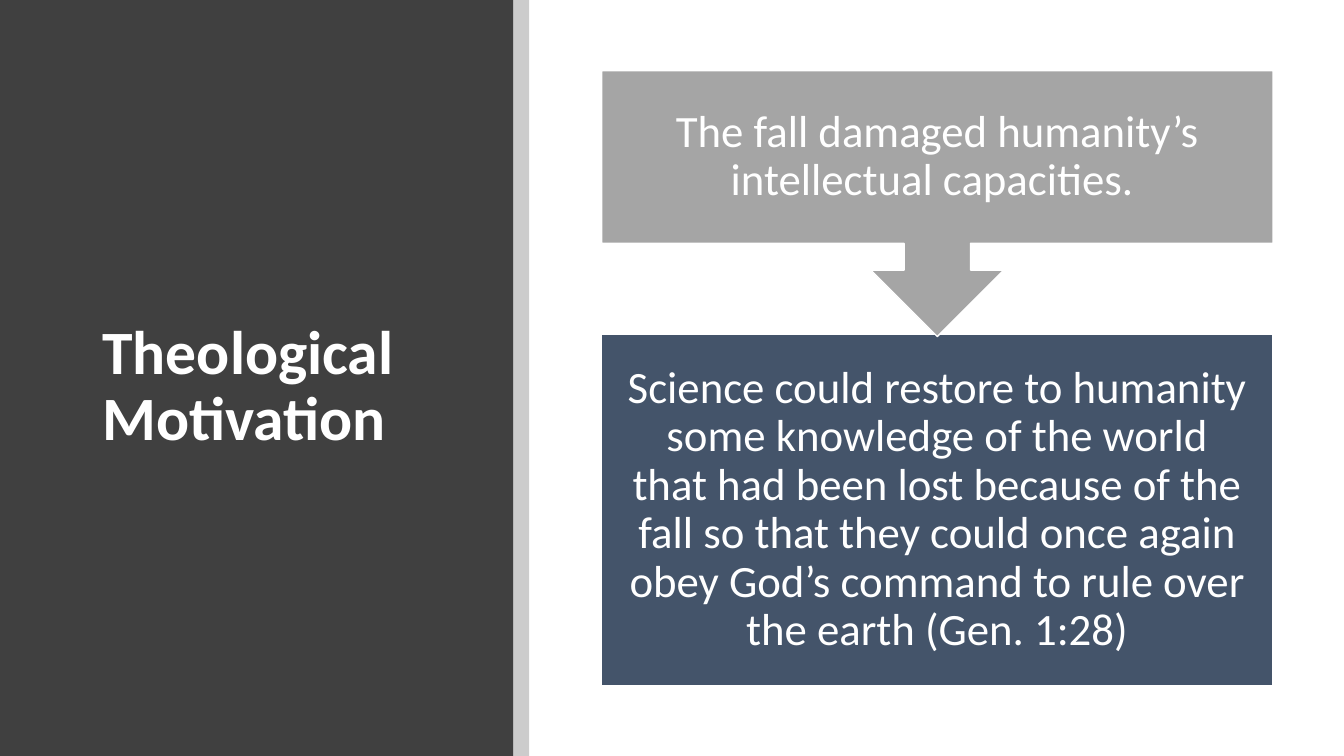
"""Build the Theological Motivation slide."""
from dataclasses import dataclass

from lxml import etree
from pptx import Presentation
from pptx.dml.color import RGBColor
from pptx.enum.shapes import MSO_SHAPE
from pptx.enum.text import MSO_ANCHOR, MSO_AUTO_SIZE, PP_ALIGN
from pptx.oxml.ns import qn
from pptx.util import Pt

RECTANGLE = MSO_SHAPE.RECTANGLE
DOWN_CALLOUT = MSO_SHAPE.DOWN_ARROW_CALLOUT
MIDDLE = MSO_ANCHOR.MIDDLE
NO_AUTOFIT = MSO_AUTO_SIZE.NONE
LEFT, CENTER = PP_ALIGN.LEFT, PP_ALIGN.CENTER

TITLE = "Theological Motivation"
CAUSE = "The fall damaged humanity’s intellectual capacities. "
RESPONSE = (
    "Science could restore to humanity some knowledge of the world that had been "
    "lost because of the fall so that they could once again obey God’s command "
    "to rule over the earth (Gen. 1:28)"
)


@dataclass(frozen=True)
class Theme:
    font: str = "Calibri"
    white: str = "FFFFFF"
    panel: str = "404040"
    stripe: str = "000000"
    stripe_opacity: int = 20
    cause: str = "A5A5A5"
    response: str = "44546A"
    title_size: int = 44
    body_size: int = 32


THEME = Theme()
WIDTH, HEIGHT = 960, 540
PANEL_WIDTH, STRIPE_WIDTH = 366.5, 11.5
FLOW_LEFT, FLOW_WIDTH = 429.8, 479.5
CAUSE_TOP, CAUSE_HEIGHT = 50.4, 190
RESPONSE_TOP, RESPONSE_HEIGHT = 239, 250.5
BOX_INSET = 18


def write_text(shape, text, *, size, bold=False, align=CENTER, inset=None):
    """Put formatted text in a shape."""
    frame = shape.text_frame
    frame.word_wrap = True
    frame.auto_size = NO_AUTOFIT
    frame.vertical_anchor = MIDDLE
    if inset is not None:
        frame.margin_left = frame.margin_right = Pt(inset)
        frame.margin_top = frame.margin_bottom = Pt(inset)
    paragraph = frame.paragraphs[0]
    paragraph.alignment = align
    paragraph.line_spacing = 0.9
    run = paragraph.add_run()
    run.text = text
    run.font.name = THEME.font
    run.font.size = Pt(size)
    run.font.bold = bold
    run.font.color.rgb = RGBColor.from_string(THEME.white)


def add_block(slide, kind, left, top, width, height, *, fill, outlined=False):
    """Add a filled preset shape."""
    shape = slide.shapes.add_shape(kind, Pt(left), Pt(top), Pt(width), Pt(height))
    shape.shadow.inherit = False
    shape.fill.solid()
    shape.fill.fore_color.rgb = RGBColor.from_string(fill)
    if outlined:
        shape.line.color.rgb = RGBColor.from_string(THEME.white)
        shape.line.width = Pt(1)
    else:
        shape.line.fill.background()
    return shape


def set_opacity(shape, percent):
    """Make a solid fill partly transparent."""
    color = shape.element.spPr.find(qn("a:solidFill")).find(qn("a:srgbClr"))
    etree.SubElement(color, qn("a:alpha"), val=str(percent * 1000))


def add_title(slide):
    """Format the title placeholder and raise it above the panel."""
    title = slide.shapes.title
    title.left, title.top = Pt(66), Pt(64)
    title.width, title.height = Pt(263), Pt(425.5)
    write_text(title, TITLE, size=THEME.title_size, bold=True, align=LEFT)
    title.element.getparent().append(title.element)


def main():
    """Build and save the presentation."""
    presentation = Presentation()
    presentation.slide_width, presentation.slide_height = Pt(WIDTH), Pt(HEIGHT)
    slide = presentation.slides.add_slide(presentation.slide_layouts[5])

    add_block(slide, RECTANGLE, 0, 0, PANEL_WIDTH, HEIGHT, fill=THEME.panel)
    add_title(slide)
    stripe = add_block(
        slide, RECTANGLE, PANEL_WIDTH, 0, STRIPE_WIDTH, HEIGHT, fill=THEME.stripe
    )
    set_opacity(stripe, THEME.stripe_opacity)

    steps = [
        (RECTANGLE, RESPONSE_TOP, RESPONSE_HEIGHT, THEME.response, RESPONSE),
        (DOWN_CALLOUT, CAUSE_TOP, CAUSE_HEIGHT, THEME.cause, CAUSE),
    ]
    for kind, top, height, fill, text in steps:
        box = add_block(
            slide, kind, FLOW_LEFT, top, FLOW_WIDTH, height, fill=fill, outlined=True
        )
        write_text(box, text, size=THEME.body_size, inset=BOX_INSET)

    presentation.save("out.pptx")


if __name__ == "__main__":
    main()
